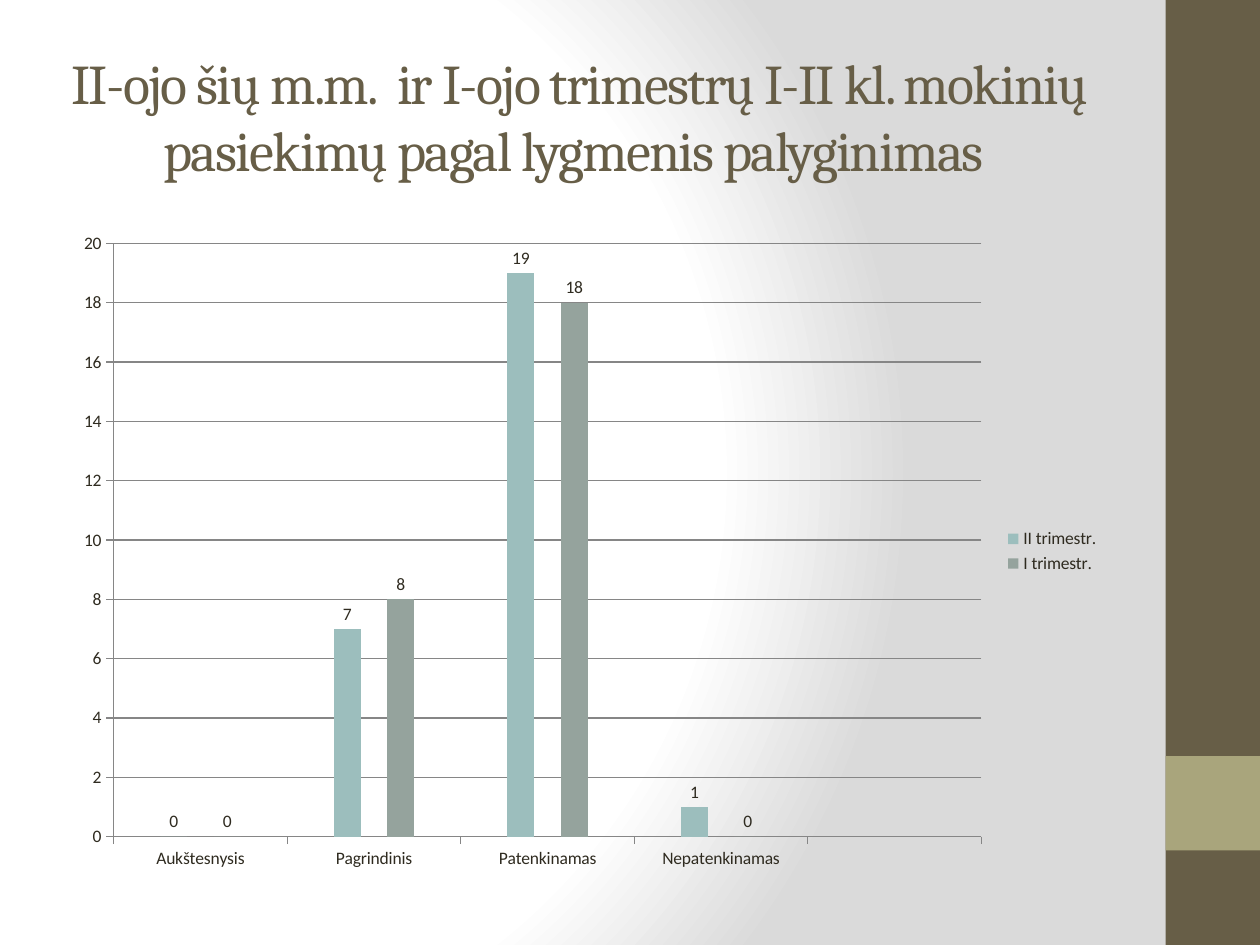
from dataclasses import dataclass
from lxml.etree import SubElement
from pptx import Presentation
from pptx.chart.data import CategoryChartData
from pptx.dml.color import RGBColor
from pptx.enum.chart import XL_CHART_TYPE, XL_LABEL_POSITION, XL_LEGEND_POSITION, XL_TICK_MARK
from pptx.enum.shapes import MSO_SHAPE
from pptx.enum.text import MSO_ANCHOR, PP_ALIGN
from pptx.oxml.ns import qn
from pptx.util import Inches, Pt


@dataclass(frozen=True)
class Theme:
    paper: str = "FFFFFF"
    shade: str = "DADADA"
    brown: str = "675E47"
    olive: str = "A9A57C"
    ink: str = "2F2B20"
    grid: str = "868686"
    head: str = "Cambria"
    body: str = "Calibri"
    big: int = 32
    small: int = 10


class Board:
    def __init__(self, slide, theme):
        self.slide, self.theme = slide, theme

    def style(self, font, name, size, color):
        font.name, font.size, font.bold = name, Pt(size), False
        font.color.rgb = RGBColor.from_string(color)

    def back(self, stops, focus):
        """Radial gradient; stops and focus edges are in percent."""
        self.slide.background.fill.gradient()
        grad = self.slide.element.find(".//" + qn("a:gradFill"))
        for child in list(grad):
            grad.remove(child)
        items = SubElement(grad, qn("a:gsLst"))
        for pos, color in stops:
            stop = SubElement(items, qn("a:gs"), pos=str(pos * 1000))
            SubElement(stop, qn("a:srgbClr"), val=color)
        route = SubElement(grad, qn("a:path"), {"path": "circle"})
        edges = {side: str(part * 1000) for side, part in zip("ltrb", focus)}
        SubElement(route, qn("a:fillToRect"), edges)

    def block(self, box, color):
        shape = self.slide.shapes.add_shape(MSO_SHAPE.RECTANGLE, *map(Inches, box))
        shape.shadow.inherit = False
        shape.fill.solid()
        shape.fill.fore_color.rgb = RGBColor.from_string(color)
        shape.line.fill.background()

    def title(self, box, text):
        frame = self.slide.shapes.add_textbox(*map(Inches, box)).text_frame
        frame.word_wrap = True
        frame.vertical_anchor = MSO_ANCHOR.MIDDLE
        para = frame.paragraphs[0]
        para.alignment = PP_ALIGN.CENTER
        run = para.add_run()
        run.text = text
        run._r.get_or_add_rPr().set("spc", "-100")
        self.style(para.font, self.theme.head, self.theme.big, self.theme.brown)

    def chart(self, box, cats, rows):
        data = CategoryChartData()
        data.categories = cats
        for name, vals, _ in rows:
            data.add_series(name, vals or [None] * len(cats))
        chart = self.slide.shapes.add_chart(
            XL_CHART_TYPE.COLUMN_CLUSTERED, *map(Inches, box), data).chart
        chart.has_title = False
        self.style(chart.font, self.theme.body, self.theme.small, self.theme.ink)

        # Axes
        gray = RGBColor.from_string(self.theme.grid)
        val, cat = chart.value_axis, chart.category_axis
        val.minimum_scale, val.maximum_scale, val.major_unit = 0, 20, 2
        val.has_major_gridlines = True
        for axis in (val, cat):
            axis.major_tick_mark = XL_TICK_MARK.OUTSIDE
        for part in (val, cat, val.major_gridlines):
            part.format.line.color.rgb = gray
            part.format.line.width = Pt(0.75)

        # Legend, listing only the series that hold values
        chart.has_legend = True
        legend = chart.legend
        legend.position = XL_LEGEND_POSITION.RIGHT
        legend.include_in_layout = False
        mark = legend._element.find(qn("c:legendPos"))
        for index, (_, vals, _) in reversed(list(enumerate(rows))):
            if not vals:
                entry = legend._element.makeelement(qn("c:legendEntry"))
                SubElement(entry, qn("c:idx"), val=str(index))
                SubElement(entry, qn("c:delete"), val="1")
                mark.addnext(entry)

        # Columns and labels
        plot = chart.plots[0]
        plot.gap_width, plot.overlap = 150, 0
        plot.vary_by_categories = False
        for series, (_, vals, color) in zip(plot.series, rows):
            series.format.fill.solid()
            series.format.fill.fore_color.rgb = RGBColor.from_string(color)
            if vals:
                labels = series.data_labels
                labels.show_value = True
                labels.position = XL_LABEL_POSITION.OUTSIDE_END


def main():
    deck = Presentation()
    deck.slide_width, deck.slide_height = Inches(10), Inches(7.5)
    theme = Theme()
    board = Board(deck.slides.add_slide(deck.slide_layouts[6]), theme)

    # Background and side band
    board.back([(0, theme.paper), (75, theme.paper), (100, theme.shade)],
               (20, 50, 100, 50))
    board.block((9.25, 0, 0.75, 7.5), theme.brown)
    board.block((9.25, 6, 0.75, 0.75), theme.olive)

    # Title
    board.title((0.43, 0.29, 8.33, 1.25),
                "II-ojo šių m.m.  ir I-ojo trimestrų I-II kl. mokinių "
                "pasiekimų pagal lygmenis palyginimas ")

    # Chart; the empty series keep the columns apart
    cats = ["Aukštesnysis", "Pagrindinis", "Patenkinamas", "Nepatenkinamas", ""]
    rows = [
        ("Series 1", None, theme.olive),
        ("II trimestr.", [0, 7, 19, 1, None], "9CBEBD"),
        ("Series 3", None, "D2CB6C"),
        ("I trimestr. ", [0, 8, 18, 0, None], "95A39D"),
        ("Series 5", None, "C89F5D"),
    ]
    board.chart((0.5, 1.75, 8.33, 5.25), cats, rows)
    deck.save("out.pptx")


if __name__ == "__main__":
    main()
